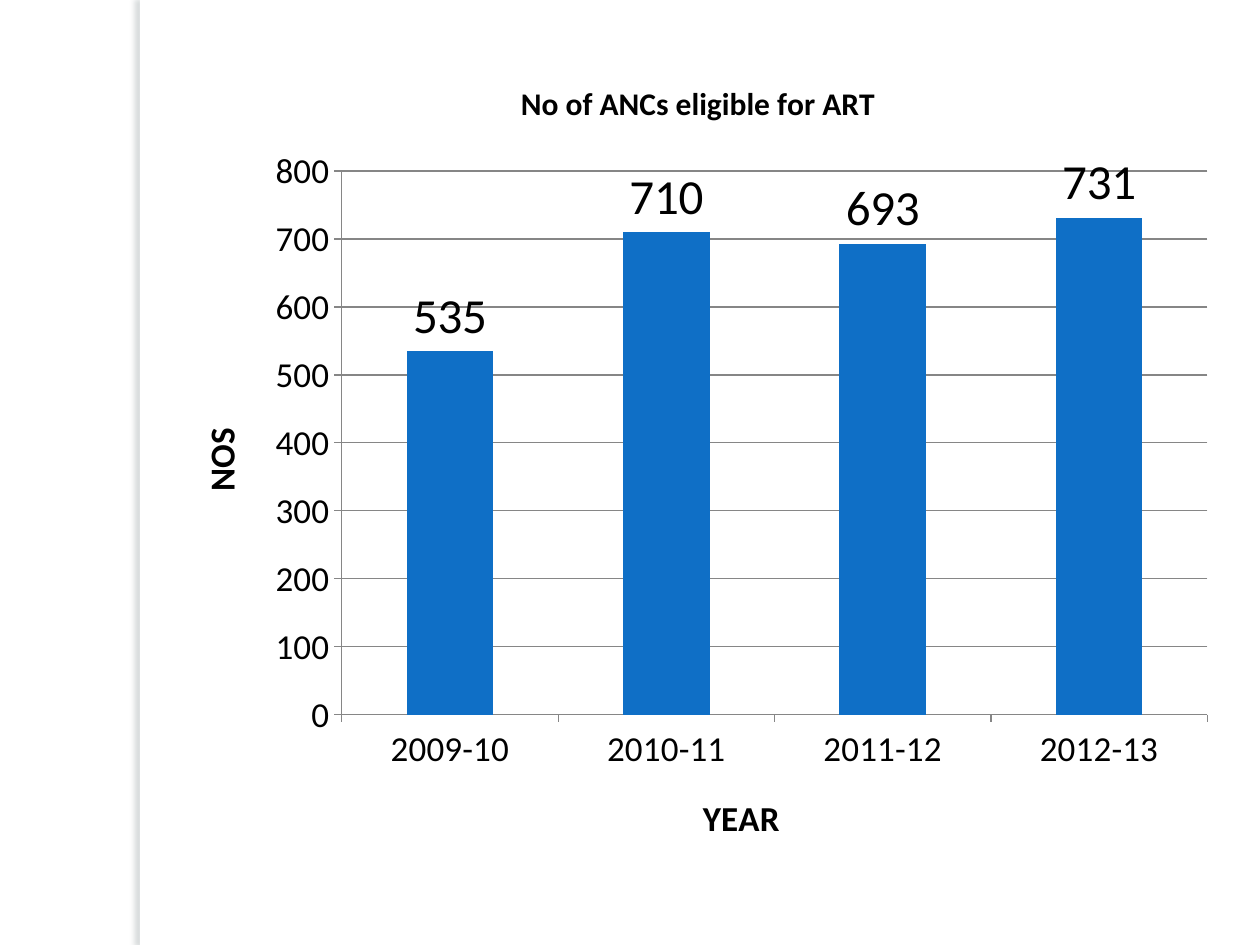
from lxml import etree
from pptx import Presentation
from pptx.chart.data import CategoryChartData
from pptx.dml.color import RGBColor
from pptx.enum.chart import XL_CHART_TYPE as ChartType
from pptx.enum.chart import XL_LABEL_POSITION as LabelPosition
from pptx.enum.chart import XL_TICK_MARK as TickMark
from pptx.enum.shapes import MSO_SHAPE as Preset
from pptx.oxml import parse_xml
from pptx.oxml.ns import nsdecls
from pptx.util import Inches, Pt

WHITE = RGBColor(0xFF, 0xFF, 0xFF)
BLACK = RGBColor(0x00, 0x00, 0x00)
BLUE = RGBColor(0x0F, 0x6F, 0xC6)
GRID_GRAY = RGBColor(0x86, 0x86, 0x86)
SHADOW_GRAY = RGBColor(0x6C, 0x7A, 0x7C)

FONT_NAME = "Calibri"
CHART_TITLE = "No of ANCs eligible for ART"
ANC_COUNTS = {"2009-10": 535, "2010-11": 710, "2011-12": 693, "2012-13": 731}


def format_font(font, size, bold=False):
    values = {"name": FONT_NAME, "size": Pt(size), "bold": bold}
    for name, value in values.items():
        setattr(font, name, value)
    font.color.rgb = BLACK


def set_title(owner, text, size):
    """Give a chart or an axis a bold title."""
    owner.has_title = True
    title = owner.chart_title if hasattr(owner, "chart_title") else owner.axis_title
    paragraph = title.text_frame.paragraphs[0]
    run = paragraph.add_run()
    run.text = text
    format_font(run.font, size, bold=True)


def add_side_strip(slide):
    """Add the white strip whose shadow falls to the left."""
    strip = slide.shapes.add_shape(
        Preset.RECTANGLE, Inches(1.11), 0, Inches(0.08), Inches(7.5))
    strip.fill.solid()
    strip.fill.fore_color.rgb = WHITE
    strip.line.fill.background()
    strip.shadow.inherit = False
    effects = strip.fill._xPr.find(
        "{http://schemas.openxmlformats.org/drawingml/2006/main}effectLst")
    effects.append(parse_xml(
        f'<a:outerShdw {nsdecls("a")} blurRad="{Pt(3)}" dist="{Pt(3)}" '
        f'dir="{180 * 60000}" algn="tl" rotWithShape="0">'
        f'<a:srgbClr val="{SHADOW_GRAY}"><a:alpha val="25000"/></a:srgbClr>'
        '</a:outerShdw>'))


def format_axis(axis, title, gridlines):
    values = {
        "has_major_gridlines": gridlines,
        "major_tick_mark": TickMark.OUTSIDE,
        "minor_tick_mark": TickMark.NONE,
    }
    for name, value in values.items():
        setattr(axis, name, value)
    axis.format.line.color.rgb = GRID_GRAY
    if gridlines:
        axis.major_gridlines.format.line.color.rgb = GRID_GRAY
    format_font(axis.tick_labels.font, 20)
    set_title(axis, title, 20)


def format_columns(plot):
    plot.gap_width = 150
    plot.vary_by_categories = False
    series = plot.series[0]
    series.format.fill.solid()
    series.format.fill.fore_color.rgb = BLUE
    labels = series.data_labels
    labels.show_value = True
    labels.position = LabelPosition.OUTSIDE_END
    format_font(labels.font, 28)


def add_anc_chart(slide):
    data = CategoryChartData()
    data.categories = list(ANC_COUNTS)
    data.add_series(CHART_TITLE, list(ANC_COUNTS.values()))
    chart = slide.shapes.add_chart(
        ChartType.COLUMN_CLUSTERED,
        Inches(1.33), Inches(0.42), Inches(8.42), Inches(6.5), data).chart
    chart.has_legend = False
    format_font(chart.font, 10)
    set_title(chart, CHART_TITLE, 18)
    format_axis(chart.category_axis, "YEAR", gridlines=False)
    format_axis(chart.value_axis, "NOS", gridlines=True)
    scale = {"minimum_scale": 0, "maximum_scale": 800, "major_unit": 100}
    for name, value in scale.items():
        setattr(chart.value_axis, name, value)
    format_columns(chart.plots[0])


def main():
    presentation = Presentation()
    presentation.slide_width = Inches(10)
    presentation.slide_height = Inches(7.5)
    slide = presentation.slides.add_slide(presentation.slide_layouts[6])
    slide.background.fill.solid()
    slide.background.fill.fore_color.rgb = WHITE
    add_side_strip(slide)
    add_anc_chart(slide)
    presentation.save("out.pptx")


if __name__ == "__main__":
    main()
